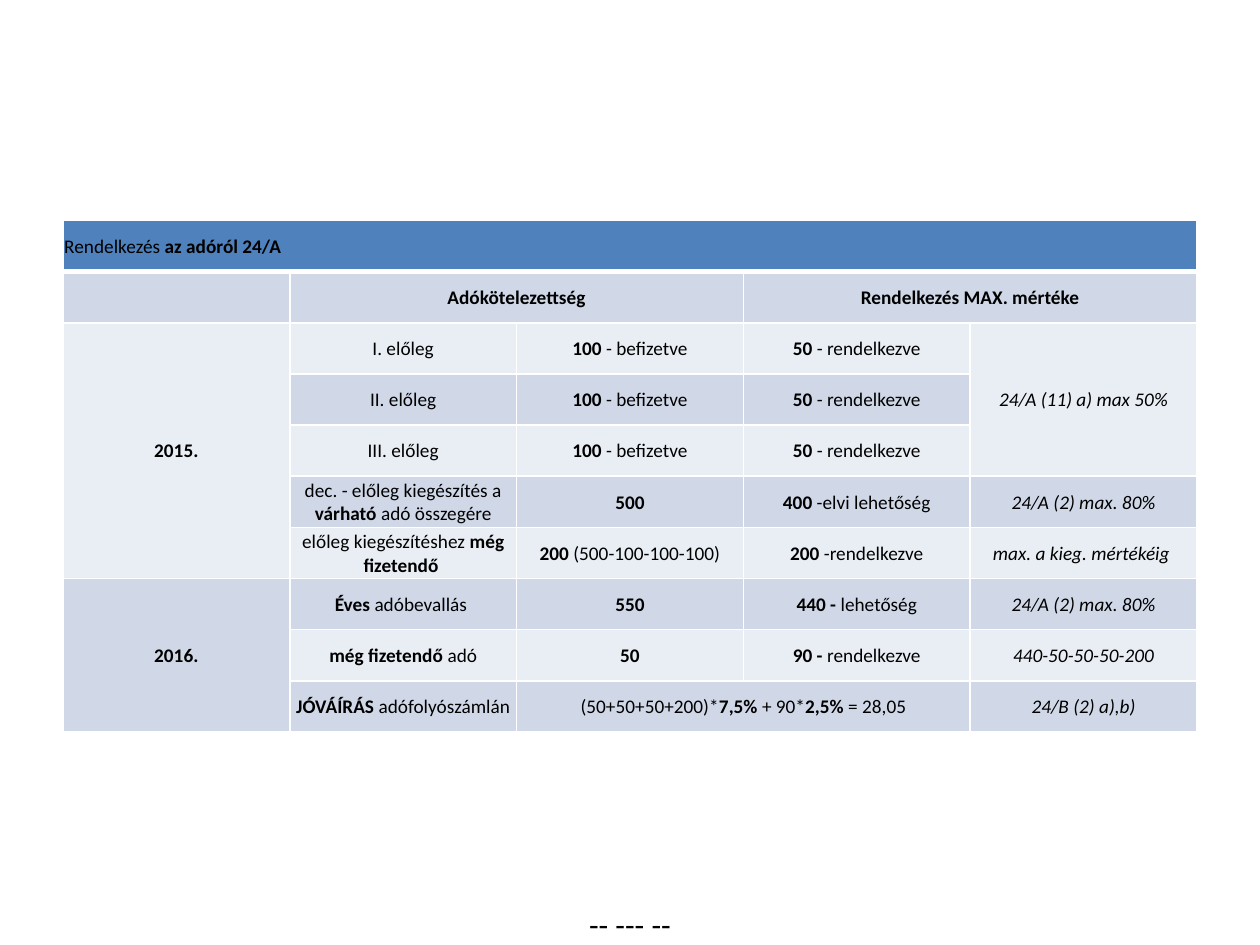
import pptx
import pptx.util
import pptx.dml.color
import pptx.enum.text
import pptx.oxml
import pptx.oxml.ns
from dataclasses import dataclass

Inches = pptx.util.Inches
Pt = pptx.util.Pt
Align = pptx.enum.text.PP_ALIGN
Anchor = pptx.enum.text.MSO_ANCHOR


@dataclass(frozen=True)
class Theme:
    font: str = "Calibri"
    ink: str = "000000"
    head: str = "4F81BD"
    dark: str = "D0D8E8"
    light: str = "E9EDF4"
    line: str = "FFFFFF"
    thin: float = 1
    thick: float = 3
    body: float = 11
    foot: float = 18


THEME = Theme()

# Text between bars is bold.
ROWS = [
    ["Rendelkezés| az adóról 24/A|", "", "", "", ""],
    ["", "|Adókötelezettség|", "", "|Rendelkezés MAX. mértéke|", ""],
    ["|2015.|", "I. előleg", "|100| - befizetve", "|50| - rendelkezve",
     "24/A (11) a) max 50%"],
    ["", "II. előleg", "|100| - befizetve", "|50| - rendelkezve", ""],
    ["", "III. előleg", "|100| - befizetve", "|50| - rendelkezve", ""],
    ["", "dec. - előleg kiegészítés a |várható| adó összegére", "|500|",
     "|400| -elvi lehetőség", "24/A (2) max. 80%"],
    ["", "előleg kiegészítéshez |még fizetendő |", "|200 |(500-100-100-100)",
     "|200| -rendelkezve", "max. a kieg. mértékéig "],
    ["|2016.|", "|Éves| adóbevallás ", "|550|", "|440 - |lehetőség",
     "24/A (2) max. 80%"],
    ["", "|még fizetendő| adó", "|50|", "|90 - |rendelkezve",
     "440-50-50-50-200"],
    ["", "|JÓVÁÍRÁS| adófolyószámlán",
     "(50+50+50+200)*|7,5% |+ 90*|2,5%| = 28,05", "", "24/B (2) a),b)"],
]

# First and last cell of each merged block, as row and column.
SPANS = [
    ((0, 0), (0, 4)),
    ((1, 1), (1, 2)),
    ((1, 3), (1, 4)),
    ((2, 0), (6, 0)),
    ((2, 4), (4, 4)),
    ((7, 0), (9, 0)),
    ((9, 2), (9, 3)),
]


def rgb(code):
    return pptx.dml.color.RGBColor.from_string(code)


def style(font, size, bold=False, italic=False):
    font.name = THEME.font
    font.size = Pt(size)
    font.color.rgb = rgb(THEME.ink)
    font.bold = bold
    font.italic = italic


def write(para, text, size, align, italic=False):
    """Add the text run by run, with bold between bars."""
    para.alignment = align
    style(para.font, size)
    for i, part in enumerate(text.split("|")):
        if part:
            run = para.add_run()
            run.text = part
            style(run.font, size, i % 2 == 1, italic)


def edge(cell, row):
    """Draw the cell borders, with a thick line under the title row."""
    props = cell._tc.get_or_add_tcPr()
    wide = {"T": row == 1, "B": row == 0}
    for side in "LRTB":
        width = Pt(THEME.thick if wide.get(side) else THEME.thin)
        props.append(pptx.oxml.parse_xml(
            f'<a:ln{side} {pptx.oxml.ns.nsdecls("a")} w="{width}">'
            f'<a:solidFill><a:srgbClr val="{THEME.line}"/></a:solidFill>'
            f'</a:ln{side}>'))


def dress(cell, text, row, col):
    edge(cell, row)
    band = THEME.dark if row % 2 else THEME.light
    cell.fill.solid()
    cell.fill.fore_color.rgb = rgb(THEME.head if row == 0 else band)
    cell.margin_left = cell.margin_right = cell.margin_top = Inches(0.01)
    cell.margin_bottom = 0
    cell.vertical_anchor = Anchor.MIDDLE
    align = Align.LEFT if row == 0 else Align.CENTER
    italic = col == 4 and row > 1
    write(cell.text_frame.paragraphs[0], text, THEME.body, align, italic)


def add_grid(slide):
    grid = slide.shapes.add_table(
        len(ROWS), len(ROWS[0]),
        Inches(0.5), Inches(1.75), Inches(9), Inches(4.06)).table
    for row, texts in enumerate(ROWS):
        for col, text in enumerate(texts):
            dress(grid.cell(row, col), text, row, col)
    for first, last in SPANS:
        grid.cell(*first).merge(grid.cell(*last))


def add_foot(slide):
    box = slide.shapes.add_textbox(
        Inches(0), Inches(7.13), Inches(10), Inches(0.4))
    frame = box.text_frame
    frame.word_wrap = True
    frame.auto_size = pptx.enum.text.MSO_AUTO_SIZE.SHAPE_TO_FIT_TEXT
    write(frame.paragraphs[0], "-- --- --", THEME.foot, Align.CENTER)


def main():
    deck = pptx.Presentation()
    deck.slide_width = Inches(10)
    deck.slide_height = Inches(7.5)
    slide = deck.slides.add_slide(deck.slide_layouts[6])
    add_grid(slide)
    add_foot(slide)
    deck.save("out.pptx")


if __name__ == "__main__":
    main()
